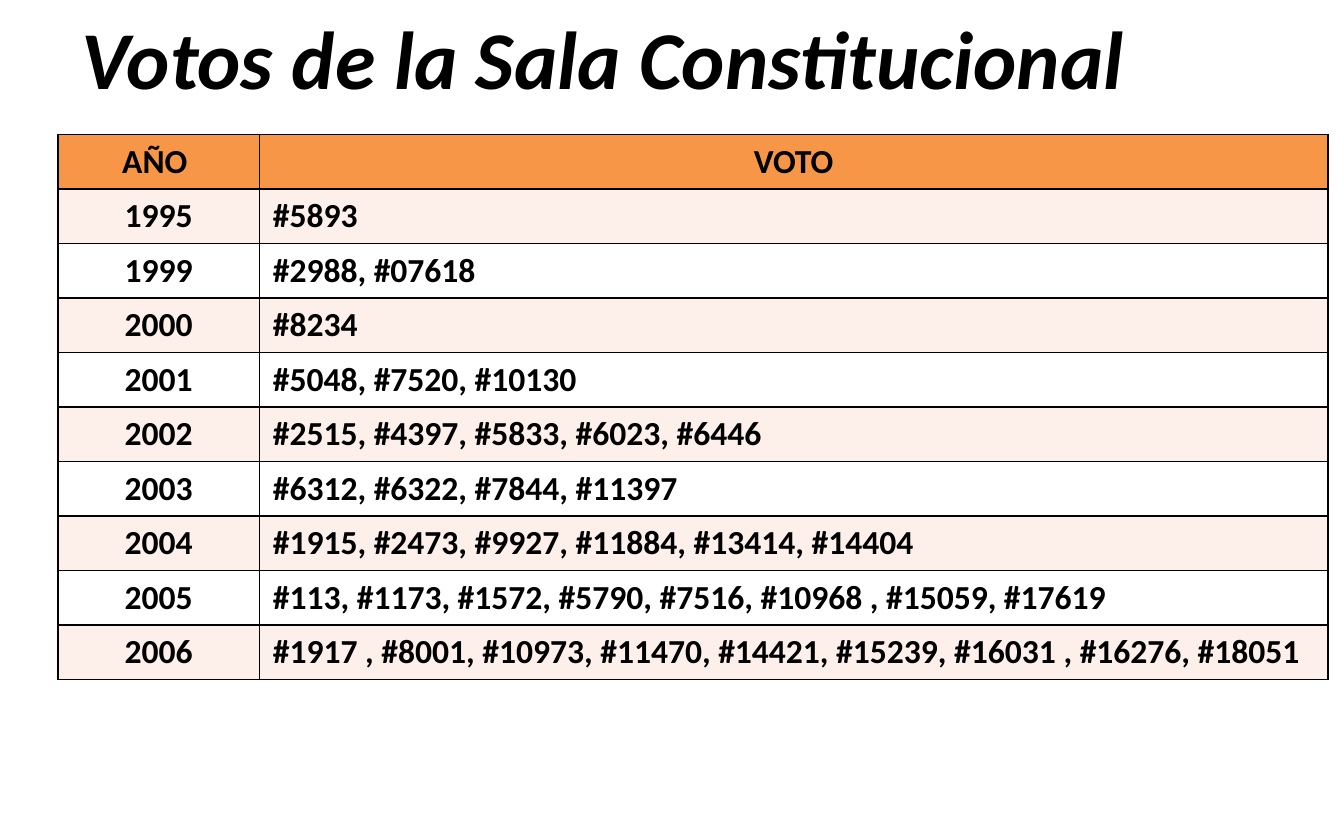
from dataclasses import dataclass

from lxml import etree
from pptx import Presentation
from pptx.dml.color import RGBColor
from pptx.enum.text import MSO_ANCHOR, MSO_AUTO_SIZE, PP_ALIGN
from pptx.oxml.ns import qn
from pptx.slide import Slide
from pptx.table import _Cell
from pptx.text.text import Font
from pptx.util import Inches, Pt

LEFT, CENTER = PP_ALIGN.LEFT, PP_ALIGN.CENTER
MIDDLE, NO_FIT = MSO_ANCHOR.MIDDLE, MSO_AUTO_SIZE.NONE

TITLE_ONLY_LAYOUT = 5
FONT_NAME = "Calibri"
BLACK, WHITE, ORANGE, PALE_ORANGE = "000000", "FFFFFF", "F79646", "FDEFE9"
COLUMN_WIDTHS = (1.5, 7.95)
COLUMN_ALIGNMENTS = (CENTER, LEFT)
ROW_HEIGHT = 0.4
BORDER_WIDTH = Pt(1)


@dataclass(frozen=True)
class YearVotes:
    year: str
    votes: str


HEADER = YearVotes("AÑO ", "VOTO")
YEARS = (
    YearVotes("1995", "#5893"),
    YearVotes("1999", "#2988, #07618"),
    YearVotes("2000", "#8234"),
    YearVotes("2001", "#5048, #7520, #10130"),
    YearVotes("2002", "#2515, #4397, #5833, #6023, #6446"),
    YearVotes("2003", "#6312, #6322, #7844, #11397"),
    YearVotes("2004", "#1915, #2473, #9927, #11884, #13414, #14404"),
    YearVotes("2005", "#113, #1173, #1572, #5790, #7516, #10968 , #15059, #17619"),
    YearVotes("2006", "#1917 , #8001, #10973, #11470, #14421, #15239, #16031 , #16276, #18051"),
)


def color(hex_string: str) -> RGBColor:
    return RGBColor.from_string(hex_string)


def format_font(font: Font, size: int, italic: bool = False) -> None:
    font.name = FONT_NAME
    font.size = Pt(size)
    font.bold = True
    font.italic = italic
    font.color.rgb = color(BLACK)


def add_title(slide: Slide, text: str) -> None:
    title = slide.shapes.title
    title.left, title.top = Inches(0.51), Inches(0)
    title.width, title.height = Inches(9), Inches(0.84)
    frame = title.text_frame
    frame.text = text
    frame.auto_size = NO_FIT
    frame.vertical_anchor = MIDDLE
    para = frame.paragraphs[0]
    para.alignment = LEFT
    format_font(para.runs[0].font, 44, italic=True)


def add_borders(cell: _Cell) -> None:
    properties = cell._tc.get_or_add_tcPr()
    for position, side in enumerate(("a:lnL", "a:lnR", "a:lnT", "a:lnB")):
        line = etree.Element(qn(side), w=str(BORDER_WIDTH))
        fill = etree.SubElement(line, qn("a:solidFill"))
        etree.SubElement(fill, qn("a:srgbClr"), val=BLACK)
        properties.insert(position, line)


def fill_cell(cell: _Cell, text: str, background: str, alignment: PP_ALIGN) -> None:
    cell.text = text
    cell.fill.solid()
    cell.fill.fore_color.rgb = color(background)
    para = cell.text_frame.paragraphs[0]
    para.alignment = alignment
    format_font(para.runs[0].font, 18)
    add_borders(cell)


def add_votes_table(slide: Slide) -> None:
    rows = (HEADER, *YEARS)
    table = slide.shapes.add_table(
        len(rows), len(COLUMN_WIDTHS), Inches(0.43), Inches(1),
        Inches(sum(COLUMN_WIDTHS)), Inches(ROW_HEIGHT * len(rows)),
    ).table
    for column, width in zip(table.columns, COLUMN_WIDTHS):
        column.width = Inches(width)
    for index, row in enumerate(rows):
        is_header = index == 0
        background = ORANGE if is_header else (WHITE, PALE_ORANGE)[index % 2]
        for column, text in enumerate((row.year, row.votes)):
            alignment = CENTER if is_header else COLUMN_ALIGNMENTS[column]
            fill_cell(table.cell(index, column), text, background, alignment)


def main() -> None:
    deck = Presentation()
    deck.slide_width, deck.slide_height = Inches(10), Inches(6.25)
    slide = deck.slides.add_slide(deck.slide_layouts[TITLE_ONLY_LAYOUT])
    add_title(slide, "Votos de la Sala Constitucional")
    add_votes_table(slide)
    deck.save("out.pptx")


if __name__ == "__main__":
    main()
